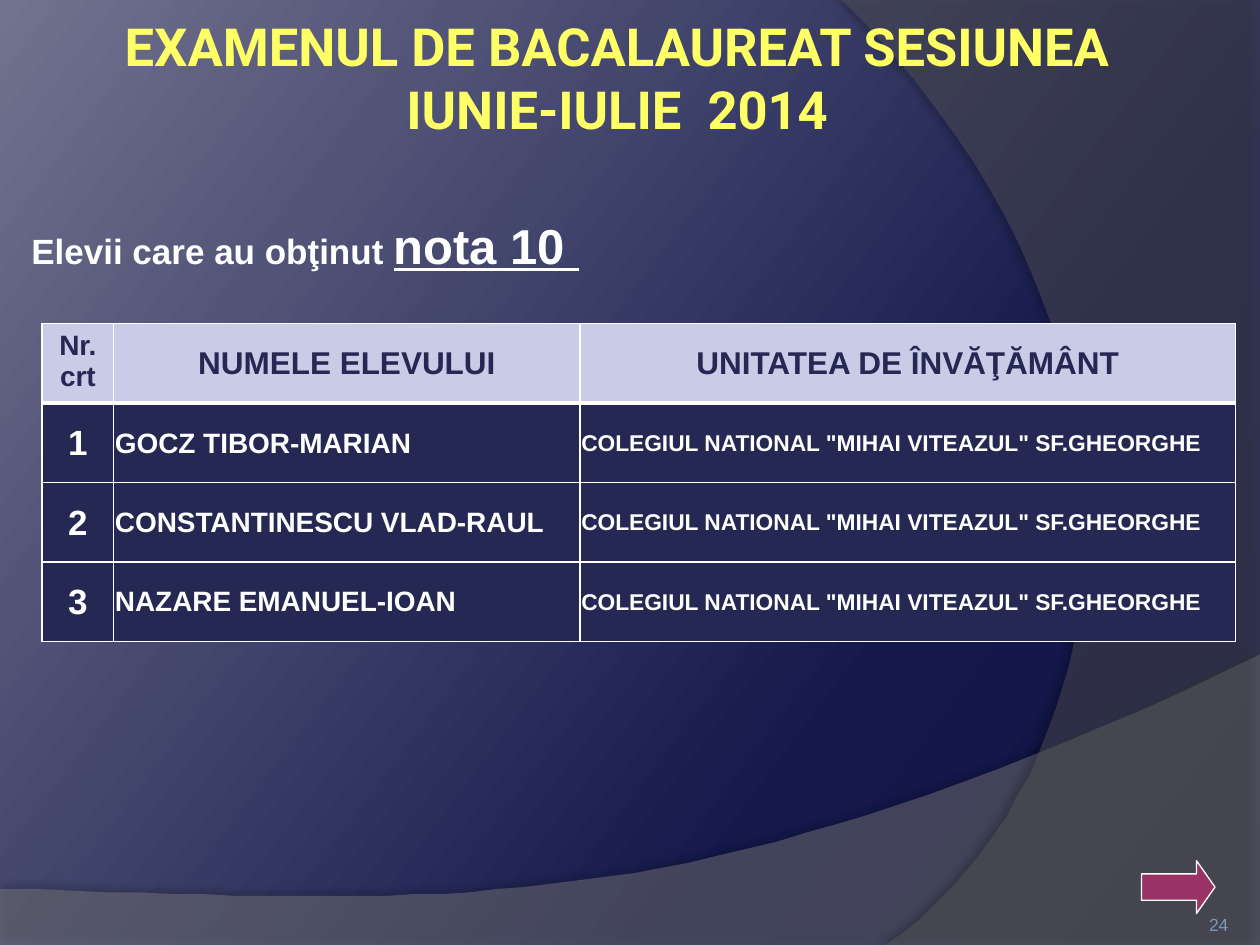
from lxml import etree
from pptx import Presentation
from pptx.dml.color import RGBColor
from pptx.enum.shapes import MSO_SHAPE
from pptx.enum.text import MSO_ANCHOR, MSO_AUTO_SIZE, PP_ALIGN
from pptx.oxml import parse_xml
from pptx.oxml.ns import qn
from pptx.util import Pt

LEFT, CENTER, RIGHT = PP_ALIGN.LEFT, PP_ALIGN.CENTER, PP_ALIGN.RIGHT
TOP, MIDDLE, BOTTOM = MSO_ANCHOR.TOP, MSO_ANCHOR.MIDDLE, MSO_ANCHOR.BOTTOM
RIGHT_ARROW = MSO_SHAPE.RIGHT_ARROW
NO_AUTOFIT = MSO_AUTO_SIZE.NONE
DRAWING = 'xmlns:a="http://schemas.openxmlformats.org/drawingml/2006/main"'

THEME = {
    "font": "Arial", "title_font": "Roboto",
    "title": "FFFF66", "text": "FFFFFF", "number": "7F96B8",
    "header_fill": "C9CBE7", "body_fill": "242852", "border": "FFFFFF", "arrow": "993366",
    "background": [(0, "10143F"), (30, "14184B"), (100, "72738E")], "background_angle": 217,
    "title_size": 30, "intro_size": 20, "grade_size": 28, "number_size": 10,
    "header_sizes": (16, 18, 18), "body_sizes": (20, 16, 13),
}

TITLE = ["EXAMENUL DE BACALAUREAT SESIUNEA", "IUNIE-IULIE  2014"]
INTRO, GRADE = "Elevii care au obţinut ", "nota 10 "
PAGE_NUMBER = "24"
HEADER = ["Nr.\vcrt", "NUMELE ELEVULUI", "UNITATEA DE ÎNVĂŢĂMÂNT"]
SCHOOL = 'COLEGIUL NATIONAL "MIHAI VITEAZUL" SF.GHEORGHE'
STUDENTS = ["GOCZ TIBOR-MARIAN", "CONSTANTINESCU VLAD-RAUL", "NAZARE EMANUEL-IOAN"]
ROWS = [HEADER] + [[str(number), name, SCHOOL] for number, name in enumerate(STUDENTS, 1)]
COLUMN_WIDTHS = [41, 266.5, 374.5]
ROW_HEIGHT = 45.4

# Straight points, then the control points of the closing curve, which starts at the last one.
WAVES = [
    {"points": [(0, 507.6), (0, 540), (720, 540), (720, 374.4)],
     "curve": [(402.5, 524.9), (281.5, 517.7), (0, 507.6)],
     "color": "7F7F7F", "opacity": 45, "shadow": (35, 4, 3.5, 270)},
    {"points": [(720, 0), (720, 540), (506.2, 540)],
     "curve": [(641.5, 445.7), (681.8, 198), (481, 0)],
     "color": "5E5E5E", "opacity": 40, "shadow": (45, 4, 4, 180)},
]


def rgb(color):
    return RGBColor.from_string(color)


def write(frame, paragraphs, size, color, font=THEME["font"], bold=True, align=LEFT,
          anchor=TOP, margins=(0, 0, 0, 0)):
    """Each paragraph is a list of (text, run overrides); a vertical tab breaks the line."""
    frame.word_wrap = True
    frame.auto_size = NO_AUTOFIT
    frame.vertical_anchor = anchor
    frame.margin_left, frame.margin_top, frame.margin_right, frame.margin_bottom = map(Pt, margins)
    for index, runs in enumerate(paragraphs):
        paragraph = frame.add_paragraph() if index else frame.paragraphs[0]
        paragraph.alignment = align
        for text, override in runs:
            for line, part in enumerate(text.split("\v")):
                if line:
                    paragraph.add_line_break()
                run = paragraph.add_run()
                run.text = part
                run.font.name, run.font.bold = font, bold
                run.font.size = Pt(override.get("size", size))
                run.font.color.rgb = rgb(color)
                if override.get("underline"):
                    run.font.underline = True


def place(shape, *box):
    shape.left, shape.top, shape.width, shape.height = map(Pt, box)


def add_text(slide, box, text_runs, **text_format):
    write(slide.shapes.add_textbox(*map(Pt, box)).text_frame, [text_runs], **text_format)


def paint_background(slide):
    fill = slide.background.fill
    fill.gradient()
    fill.gradient_angle = 0
    gradient = slide.background._cSld.find(".//" + qn("a:gradFill"))
    stops = gradient.find(qn("a:gsLst"))
    for stop in list(stops):
        stops.remove(stop)
    for position, color in THEME["background"]:
        stops.append(parse_xml(f'<a:gs {DRAWING} pos="{position * 1000}">'
                               f'<a:srgbClr val="{color}"/></a:gs>'))
    gradient.find(qn("a:lin")).set("ang", str(THEME["background_angle"] * 60000))


def curve_points(start, controls, steps=40):
    corners = [start, *controls]
    for step in range(1, steps + 1):
        t = step / steps
        weights = ((1 - t) ** 3, 3 * t * (1 - t) ** 2, 3 * t * t * (1 - t), t ** 3)
        yield tuple(sum(w * corner[axis] for w, corner in zip(weights, corners))
                    for axis in (0, 1))


def add_wave(slide, wave, depth):
    points = wave["points"] + list(curve_points(wave["points"][-1], wave["curve"]))
    builder = slide.shapes.build_freeform(*points[0], scale=Pt(1))
    builder.add_line_segments(points[1:], close=True)
    shape = builder.convert_to_shape()
    shape.fill.solid()
    shape.fill.fore_color.rgb = rgb(wave["color"])
    shape.line.fill.background()
    properties = shape._element.spPr
    color = properties.find(qn("a:solidFill") + "/" + qn("a:srgbClr"))
    etree.SubElement(color, qn("a:alpha")).set("val", str(wave["opacity"] * 1000))
    opacity, blur, distance, angle = wave["shadow"]
    properties.append(parse_xml(
        f'<a:effectLst {DRAWING}><a:outerShdw blurRad="{Pt(blur)}" dist="{Pt(distance)}" '
        f'dir="{angle * 60000}" algn="ctr" rotWithShape="0"><a:srgbClr val="000000">'
        f'<a:alpha val="{opacity * 1000}"/></a:srgbClr></a:outerShdw></a:effectLst>'))
    slide.shapes._spTree.insert(2 + depth, shape._element)


def set_borders(cell, top=1, bottom=1):
    properties = cell._tc.get_or_add_tcPr()
    for index, (side, width) in enumerate(zip("LRTB", (1, 1, top, bottom))):
        properties.insert(index, parse_xml(
            f'<a:ln{side} {DRAWING} w="{Pt(width)}"><a:solidFill>'
            f'<a:srgbClr val="{THEME["border"]}"/></a:solidFill></a:ln{side}>'))


def add_student_table(slide):
    table = slide.shapes.add_table(
        len(ROWS), len(HEADER), Pt(24), Pt(185), Pt(sum(COLUMN_WIDTHS)),
        Pt(ROW_HEIGHT * len(ROWS))).table
    for column, width in zip(table.columns, COLUMN_WIDTHS):
        column.width = Pt(width)
    for row_index, values in enumerate(ROWS):
        table.rows[row_index].height = Pt(ROW_HEIGHT)
        header = row_index == 0
        sizes = THEME["header_sizes" if header else "body_sizes"]
        for column_index, value in enumerate(values):
            cell = table.cell(row_index, column_index)
            first = column_index == 0
            write(cell.text_frame, [[(value, {})]], size=sizes[column_index],
                  color=THEME["body_fill" if header else "text"],
                  align=CENTER if header or first else LEFT)
            cell.vertical_anchor = TOP if header and first else MIDDLE
            margins = (6.5, 3.6, 6.5, 3.6) if header else (0.7, 0.7, 0.7, 0)
            cell.margin_left, cell.margin_top, cell.margin_right, cell.margin_bottom = map(
                Pt, margins)
            cell.fill.solid()
            cell.fill.fore_color.rgb = rgb(THEME["header_fill" if header else "body_fill"])
            set_borders(cell, top=3 if row_index == 1 else 1, bottom=3 if header else 1)


def add_next_arrow(slide):
    arrow = slide.shapes.add_shape(RIGHT_ARROW, Pt(652.3), Pt(491.8), Pt(42), Pt(30.2))
    arrow.adjustments[0], arrow.adjustments[1] = 0.5, 0.35
    arrow.shadow.inherit = False
    arrow.fill.solid()
    arrow.fill.fore_color.rgb = rgb(THEME["arrow"])
    arrow.line.color.rgb = rgb(THEME["border"])
    arrow.line.width = Pt(0.75)


def main():
    presentation = Presentation()
    presentation.slide_width, presentation.slide_height = Pt(720), Pt(540)
    slide = presentation.slides.add_slide(presentation.slide_layouts[5])
    paint_background(slide)
    for depth, wave in enumerate(WAVES):
        add_wave(slide, wave, depth)

    title = slide.shapes.title
    place(title, 0.7, 9.4, 705.6, 70.6)
    write(title.text_frame, [[(line, {})] for line in TITLE], size=THEME["title_size"],
          color=THEME["title"], font=THEME["title_font"], align=CENTER, anchor=BOTTOM,
          margins=(0, 0, 1.4, 0))
    add_text(slide, (10.8, 119.5, 685.4, 41),
             [(INTRO, {}), (GRADE, {"size": THEME["grade_size"], "underline": True})],
             size=THEME["intro_size"], color=THEME["text"], margins=(7.2, 3.6, 7.2, 3.6))
    add_student_table(slide)
    add_next_arrow(slide)
    add_text(slide, (642.2, 505.4, 59.8, 28.8), [(PAGE_NUMBER, {})], size=THEME["number_size"],
             color=THEME["number"], bold=False, align=RIGHT, anchor=BOTTOM)
    presentation.save("out.pptx")


if __name__ == "__main__":
    main()
